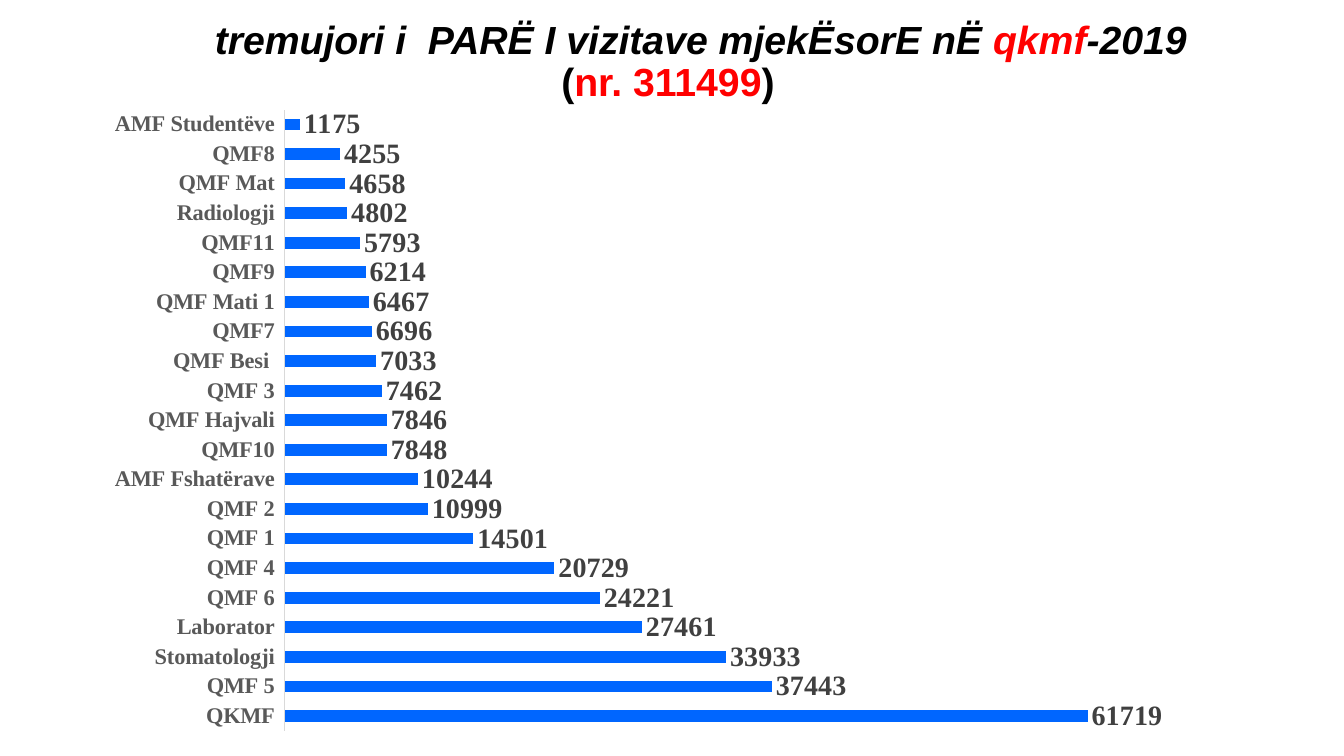
from lxml import etree
from pptx import Presentation
from pptx.chart.data import CategoryChartData
from pptx.dml.color import RGBColor
from pptx.enum.chart import XL_CHART_TYPE, XL_LABEL_POSITION, XL_TICK_LABEL_POSITION, XL_TICK_MARK
from pptx.enum.text import MSO_ANCHOR, MSO_AUTO_SIZE, PP_ALIGN
from pptx.oxml.ns import qn
from pptx.util import Inches, Pt

BAR_CLUSTERED = XL_CHART_TYPE.BAR_CLUSTERED
OUTSIDE_END = XL_LABEL_POSITION.OUTSIDE_END
LABELS_LOW = XL_TICK_LABEL_POSITION.LOW
NO_TICK = XL_TICK_MARK.NONE
MIDDLE = MSO_ANCHOR.MIDDLE
NO_FIT = MSO_AUTO_SIZE.NONE
CENTER = PP_ALIGN.CENTER

WIDTH, HEIGHT = Inches(13.33), Inches(7.5)
COLORS = {"text": "000000", "accent": "FF0000", "bar": "0066FF",
          "axis": "D9D9D9", "category": "595959", "value": "404040"}
TITLE_BOX = (0.18, 0.23, 12.89, 0.79)
CHART_BOX = (0.98, 0.96, 11.11, 6.42)
PLOT_SHARES = {"x": 0.166, "y": 0.02, "w": 0.813, "h": 0.96}
TITLE_FORMAT = {"name": "Arial", "size": Pt(28), "bold": True}
CATEGORY_FORMAT = {"name": "Times New Roman", "size": Pt(16), "bold": True}
VALUE_FORMAT = {"name": "Times New Roman", "size": Pt(20), "bold": True}
CHART_FORMAT = {"name": "Calibri", "size": Pt(10)}

TITLE_LINES = [
    (True, 0.65, [("tremujori i  PARË I vizitave mjekËsorE nË ", "text"),
                  ("qkmf", "accent"), ("-2019", "text")]),
    (False, 0, [("(", "text"), ("nr. 311499", "accent"), (")", "text")]),
]
VISITS = {
    "QKMF": 61719, "QMF 5": 37443, "Stomatologji": 33933, "Laborator": 27461,
    "QMF 6": 24221, "QMF 4": 20729, "QMF 1": 14501, "QMF 2": 10999,
    "AMF Fshatërave": 10244, "QMF10": 7848, "QMF Hajvali": 7846,
    "QMF 3": 7462, "QMF Besi ": 7033, "QMF7": 6696, "QMF Mati 1": 6467,
    "QMF9": 6214, "QMF11": 5793, "Radiologji": 4802, "QMF Mat": 4658,
    "QMF8": 4255, "AMF Studentëve": 1175,
}


def color(name):
    return RGBColor.from_string(COLORS[name])


def apply_format(target, values):
    for name, value in values.items():
        setattr(target, name, value)


def set_font(font, values, color_name):
    apply_format(font, values)
    font.color.rgb = color(color_name)


def add_title(page, box):
    title = page.shapes.title
    left, top, width, height = map(Inches, box)
    apply_format(title, {"left": left, "top": top, "width": width, "height": height})
    frame = title.text_frame
    apply_format(frame, {"word_wrap": True, "auto_size": NO_FIT, "vertical_anchor": MIDDLE})
    for index, (italic, indent, spans) in enumerate(TITLE_LINES):
        para = frame.add_paragraph() if index else frame.paragraphs[0]
        apply_format(para, {"alignment": CENTER, "line_spacing": 0.9, "space_before": Pt(0)})
        para._p.get_or_add_pPr().set("marL", str(Inches(indent)))
        for text, color_name in spans:
            span = para.add_run()
            span.text = text
            set_font(span.font, {**TITLE_FORMAT, "italic": italic}, color_name)


def place_plot(chart, shares):
    plot_area = chart._chartSpace.chart.plotArea
    for old in plot_area.findall(qn("c:layout")):
        plot_area.remove(old)
    layout = etree.Element(qn("c:layout"))
    manual = etree.SubElement(layout, qn("c:manualLayout"))
    settings = {"layoutTarget": "inner", "xMode": "edge", "yMode": "edge", **shares}
    for name, value in settings.items():
        etree.SubElement(manual, qn(f"c:{name}")).set("val", str(value))
    plot_area.insert(0, layout)


def add_visits_chart(page, box):
    data = CategoryChartData(number_format="0")
    data.categories = list(VISITS)
    data.add_series("Series 1", list(VISITS.values()))
    chart = page.shapes.add_chart(BAR_CLUSTERED, *map(Inches, box), data).chart
    apply_format(chart, {"has_title": False, "has_legend": False})
    set_font(chart.font, CHART_FORMAT, "text")
    place_plot(chart, PLOT_SHARES)

    categories = chart.category_axis
    apply_format(categories, {"major_tick_mark": NO_TICK, "minor_tick_mark": NO_TICK,
                              "tick_label_position": LABELS_LOW,
                              "has_major_gridlines": False})
    set_font(categories.tick_labels.font, CATEGORY_FORMAT, "category")
    categories.format.line.color.rgb = color("axis")
    categories.format.line.width = Pt(0.75)
    apply_format(chart.value_axis, {"visible": False, "has_major_gridlines": False,
                                    "minimum_scale": 0, "maximum_scale": 70000})

    plot = chart.plots[0]
    apply_format(plot, {"gap_width": 150, "overlap": -25, "vary_by_categories": False,
                        "has_data_labels": True})
    fill = plot.series[0].format.fill
    fill.solid()
    fill.fore_color.rgb = color("bar")
    labels = plot.data_labels
    apply_format(labels, {"show_value": True, "position": OUTSIDE_END,
                          "number_format": "0", "number_format_is_linked": False})
    set_font(labels.font, VALUE_FORMAT, "value")


def main():
    deck = Presentation()
    apply_format(deck, {"slide_width": WIDTH, "slide_height": HEIGHT})
    page = deck.slides.add_slide(deck.slide_layouts.get_by_name("Title Only"))
    add_title(page, TITLE_BOX)
    add_visits_chart(page, CHART_BOX)
    deck.save("out.pptx")


if __name__ == "__main__":
    main()
